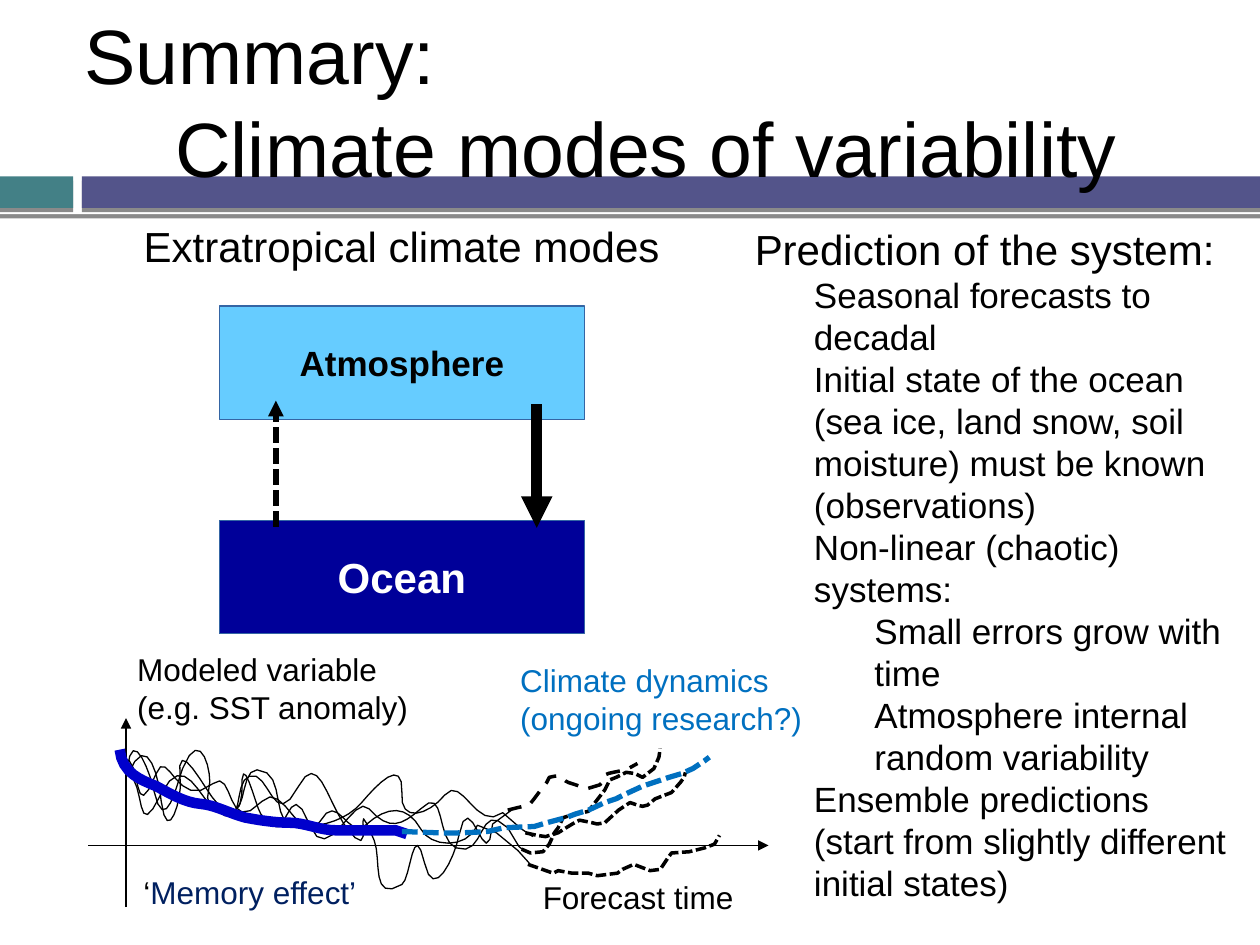
from dataclasses import dataclass

from lxml.etree import SubElement
from pptx import Presentation
from pptx.dml.color import RGBColor
from pptx.enum.dml import MSO_LINE
from pptx.enum.shapes import MSO_CONNECTOR, MSO_SHAPE
from pptx.enum.text import MSO_ANCHOR, PP_ALIGN
from pptx.oxml.ns import qn
from pptx.util import Cm, Pt


@dataclass(frozen=True)
class Theme:
    font: str = "Arial"
    black: str = "000000"
    white: str = "FFFFFF"
    teal: str = "438086"
    violet: str = "53548A"
    sky: str = "66CCFF"
    navy: str = "000099"
    outline: str = "3465A4"
    memory: str = "0000CC"
    memory_text: str = "002060"
    dynamics: str = "0070C0"
    title: int = 44
    heading: int = 24
    body: int = 20
    label: int = 18


def inch(value):
    return Cm(value * 2.54)


def bezier(start, segment, steps=8):
    points = [start, segment[:2], segment[2:4], segment[4:]]
    for step in range(1, steps + 1):
        t = step / steps
        weights = ((1 - t) ** 3, 3 * t * (1 - t) ** 2, 3 * t * t * (1 - t), t ** 3)
        yield tuple(sum(w * point[axis] for w, point in zip(weights, points)) for axis in (0, 1))


class SlideBuilder:
    def __init__(self, page, theme):
        self.page = page
        self.theme = theme

    def span(self, para, text, size, color, bold=False):
        span = para.add_run()
        span.text = text
        span.font.name = self.theme.font
        span.font.size = Pt(size)
        span.font.bold = bold
        span.font.color.rgb = RGBColor.from_string(color)

    def block(self, left, top, width, height, fill, outline=None, shadow=False):
        box = self.page.shapes.add_shape(
            MSO_SHAPE.RECTANGLE, inch(left), inch(top), inch(width), inch(height))
        box.fill.solid()
        box.fill.fore_color.rgb = RGBColor.from_string(fill)
        if outline:
            self.stroke(box.line, outline, 0.75)
        else:
            box.line.fill.background()
        box.shadow.inherit = False
        if shadow:
            effects = box._element.spPr.find(qn("a:effectLst"))
            outer = SubElement(effects, qn("a:outerShdw"), blurRad="0", dist=str(Pt(2.4)),
                               dir="5400000", algn="ctr", rotWithShape="0")
            color = SubElement(outer, qn("a:srgbClr"), val=self.theme.black)
            SubElement(color, qn("a:alpha"), val="45000")
        return box

    def component(self, left, top, text, size, fill, color):
        box = self.block(left, top, 2.9, 0.9, fill, self.theme.outline)
        frame = box.text_frame
        frame.vertical_anchor = MSO_ANCHOR.MIDDLE
        para = frame.paragraphs[0]
        para.alignment = PP_ALIGN.CENTER
        self.span(para, text, size, color, True)

    def text_box(self, left, top, width, height, wrap, margin=True):
        box = self.page.shapes.add_textbox(inch(left), inch(top), inch(width), inch(height))
        frame = box.text_frame
        frame.word_wrap = wrap
        if not margin:
            frame.margin_left = frame.margin_right = frame.margin_top = frame.margin_bottom = 0
        return frame

    def title(self, left, top, width, height, lines):
        frame = self.text_box(left, top, width, height, True, False)
        frame.vertical_anchor = MSO_ANCHOR.MIDDLE
        for index, (text, alignment) in enumerate(lines):
            para = frame.add_paragraph() if index else frame.paragraphs[0]
            para.alignment = alignment
            self.span(para, text, self.theme.title, self.theme.black)

    def outline(self, left, top, width, height, lines):
        frame = self.text_box(left, top, width, height, True, False)
        for index, (level, text) in enumerate(lines):
            para = frame.add_paragraph() if index else frame.paragraphs[0]
            para.level = level
            properties = para._p.get_or_add_pPr()
            properties.set("marL", str(inch((0.47, 0.94, 1.42)[level])))
            properties.set("indent", "0")
            size = self.theme.body if level else self.theme.heading
            self.span(para, text, size, self.theme.black)

    def label(self, left, top, width, height, lines):
        frame = self.text_box(left, top, width, height, False)
        for index, spans in enumerate(lines):
            para = frame.add_paragraph() if index else frame.paragraphs[0]
            for text, color in spans:
                self.span(para, text, self.theme.label, color)

    def stroke(self, line, color, weight, dash=None):
        line.color.rgb = RGBColor.from_string(color)
        line.width = Pt(weight)
        if dash:
            line.dash_style = dash

    def arrow(self, start, end, weight, dash=None):
        arrow = self.page.shapes.add_connector(
            MSO_CONNECTOR.STRAIGHT, *(inch(value) for value in start + end))
        self.stroke(arrow.line, self.theme.black, weight, dash)
        properties = arrow._element.spPr
        SubElement(properties.find(qn("a:ln")), qn("a:tailEnd"), type="triangle")
        SubElement(properties, qn("a:effectLst"))

    def curve(self, start, segments, color, weight, dash=None):
        points = [start]
        for segment in segments:
            points.extend(bezier(points[-1], segment) if len(segment) == 6 else [segment])
        points = [(inch(x), inch(y)) for x, y in points]
        builder = self.page.shapes.build_freeform(*points[0])
        builder.add_line_segments(points[1:], close=False)
        curve = builder.convert_to_shape()
        curve.fill.background()
        curve.shadow.inherit = False
        self.stroke(curve.line, color, weight, dash)


MEMBERS = [
    ((0.98, 6.02), [(1.13, 6, 1.05, 6.6, 1.24, 6.14), (1.33, 5.91, 1.41, 6.45, 1.69, 6.22), (1.86, 6.08, 1.79, 6.66, 2.08, 6.36), (2.25, 6.18, 2.4, 6.77, 2.54, 6.52), (2.68, 6.27, 2.76, 6.67, 2.9, 6.55), (3.08, 6.39, 3.23, 6.39, 3.34, 6.58), (3.41, 6.72, 3.7, 6.75, 3.79, 6.55), (3.94, 6.61), (4.11, 6.75), (4.2, 6.85)]),
    ((1.01, 6.11), [(1.05, 5.72, 1.21, 6.19, 1.22, 6.27), (1.31, 6.67, 1.41, 6.2, 1.45, 6.1), (1.6, 5.73, 1.69, 6.17, 1.66, 6.25), (1.58, 6.49, 1.92, 6.55, 1.92, 6.3), (1.91, 5.89, 2.03, 6.4, 2.07, 6.46), (2.3, 6.83, 2.27, 6.07, 2.46, 6.55), (2.6, 6.9, 2.81, 6.28, 2.93, 6.42), (3.09, 6.6, 3.19, 6.55, 3.34, 6.42), (3.54, 6.22, 3.46, 6.67, 3.62, 6.73), (3.86, 6.82, 3.79, 6.34, 4.03, 6.57), (4.12, 6.72), (4.17, 6.76)]),
    ((1.01, 6.13), [(1.16, 6.2, 1.07, 6.73, 1.28, 6.3), (1.46, 5.94, 1.59, 6.35, 1.71, 6.43), (1.96, 6.62, 1.84, 6.21, 1.98, 6.16), (2.14, 6.1, 2.17, 6.62, 2.37, 6.24), (2.52, 5.96, 2.59, 6.33, 2.73, 6.54), (3.03, 6.97, 2.76, 6.17, 2.97, 6.67), (3.03, 6.82, 2.94, 7.17, 3.19, 7.02), (3.26, 6.98, 3.28, 6.47, 3.37, 6.85), (3.44, 7.17, 3.61, 6.8, 3.64, 6.64), (3.73, 6.17, 3.86, 7.02, 3.91, 6.54), (4.06, 6.43)]),
    ((1.01, 6.16), [(1.18, 5.74, 1.27, 6.24, 1.28, 6.36), (1.33, 6.74, 1.45, 6.32, 1.43, 6.19), (1.39, 5.78, 1.64, 6.3, 1.72, 6.37), (1.99, 6.62, 1.88, 6.11, 2.04, 6.11), (2.3, 6.12, 2.11, 6.6, 2.4, 6.57), (2.57, 6.55, 2.75, 6.51, 2.87, 6.37), (2.99, 6.23, 3.2, 6, 3.19, 6.29), (3.17, 6.54, 3.4, 6.47, 3.53, 6.31), (3.67, 6.14, 3.78, 6.61, 3.99, 6.45), (4.14, 6.58), (4.23, 6.64)]),
]
MEMORY = ((0.95, 5.95), [(0.97, 6.14, 1.12, 6.19, 1.24, 6.24), (1.35, 6.3, 1.47, 6.37, 1.59, 6.38), (1.71, 6.39, 1.83, 6.46, 1.95, 6.49), (2.06, 6.51, 2.18, 6.53, 2.3, 6.53), (2.42, 6.53, 2.54, 6.59, 2.66, 6.59), (3.14, 6.59), (3.23, 6.62)])
FORECASTS = [
    (MSO_LINE.DASH, (4.03, 6.43), [(4.11, 6.41), (4.2, 6.39), (4.24, 6.34), (4.3, 6.26), (4.34, 6.21), (4.36, 6.17), (4.48, 6.14, 4.44, 6.18, 4.51, 6.21), (4.57, 6.23), (4.66, 6.26), (4.76, 6.23), (4.82, 6.18, 4.75, 6.15, 4.87, 6.13), (4.97, 6.11), (5.06, 6.06)]),
    (MSO_LINE.SQUARE_DOT, (4.17, 6.61), [(4.26, 6.63), (4.33, 6.64), (4.43, 6.61), (4.51, 6.56), (4.56, 6.53), (4.6, 6.51), (4.7, 6.53), (4.74, 6.54), (4.8, 6.53), (4.91, 6.43), (5, 6.37), (5.06, 6.39), (5.1, 6.4), (5.14, 6.39), (5.2, 6.34), (5.33, 6.29), (5.4, 6.21), (5.43, 6.17), (5.44, 6.13)]),
    (MSO_LINE.SQUARE_DOT, (4.14, 6.74), [(4.21, 6.77), (4.31, 6.76), (4.36, 6.7), (4.4, 6.61), (4.43, 6.57), (4.47, 6.49), (4.53, 6.47), (4.67, 6.44), (4.7, 6.4), (4.8, 6.27), (4.84, 6.19), (4.89, 6.17), (4.97, 6.13), (5.04, 6.14), (5.1, 6.17), (5.19, 6.1), (5.23, 6.01), (5.24, 5.94)]),
    (MSO_LINE.SQUARE_DOT, (4.19, 6.86), [(4.39, 6.93), (4.43, 6.91), (4.54, 6.93), (4.67, 6.93), (4.74, 6.95), (4.9, 6.93), (4.94, 6.9), (5.03, 6.86), (5.16, 6.91), (5.24, 6.9), (5.3, 6.81), (5.33, 6.77), (5.47, 6.76), (5.59, 6.73), (5.67, 6.7), (5.71, 6.63)]),
]
DYNAMICS = ((3.19, 6.6), [(3.51, 6.61, 3.56, 6.62, 3.87, 6.6), (4, 6.57), (4.24, 6.56), (4.34, 6.53), (4.49, 6.49), (4.57, 6.46), (4.67, 6.43), (4.8, 6.37), (4.89, 6.34), (4.97, 6.3), (5.1, 6.24), (5.31, 6.17), (5.41, 6.14), (5.5, 6.1), (5.59, 6.04), (5.63, 6.01)])
PREDICTION = [
    (0, "Prediction of the system:"),
    (1, "Seasonal forecasts to decadal"),
    (1, "Initial state of the ocean (sea ice, land snow, soil moisture) must be known (observations)"),
    (1, "Non-linear (chaotic) systems:"),
    (2, "Small errors grow with time"),
    (2, "Atmosphere internal random variability"),
    (1, "Ensemble predictions"),
    (1, "(start from slightly different initial states)"),
]


def main():
    deck = Presentation()
    deck.slide_width, deck.slide_height = Cm(25.4), Cm(19.05)
    theme = Theme()
    slide = SlideBuilder(deck.slides.add_slide(deck.slide_layouts[6]), theme)

    slide.block(0, 1.35, 10, 0.35, theme.white, shadow=True)
    slide.block(0, 1.4, 0.58, 0.25, theme.teal, shadow=True)
    slide.block(0.65, 1.4, 9.35, 0.25, theme.violet, shadow=True)
    slide.title(0.67, 0.11, 8.92, 1.37, [
        ("Summary:", PP_ALIGN.LEFT), ("Climate modes of variability", PP_ALIGN.CENTER)])
    slide.outline(0.67, 1.75, 5.25, 4.92, [(0, "Extratropical climate modes")])
    slide.outline(5.52, 1.77, 4.35, 4.92, PREDICTION)

    slide.arrow((0.7, 6.71), (6.1, 6.71), 0.75)
    slide.arrow((1, 7.2), (1, 5.7), 0.75)
    slide.label(4.21, 6.92, 1.9, 0.38, [[("Forecast time", theme.black)]])
    slide.label(0.99, 5.11, 2.81, 0.66, [
        [("Modeled variable", theme.black)], [("(e.g. SST anomaly)", theme.black)]])
    for start, segments in MEMBERS:
        slide.curve(start, segments, theme.black, 0.75)
    slide.curve(*MEMORY, theme.memory, 6)

    slide.component(1.74, 4.13, "Ocean", theme.heading, theme.navy, theme.white)
    slide.component(1.74, 2.43, "Atmosphere", theme.body, theme.sky, theme.black)
    slide.arrow((4.26, 3.21), (4.26, 4.19), 6)
    slide.arrow((2.19, 4.18), (2.19, 3.18), 3, MSO_LINE.SQUARE_DOT)

    for dash, start, segments in FORECASTS:
        slide.curve(start, segments, theme.black, 2, dash)
    slide.curve(*DYNAMICS, theme.dynamics, 3, MSO_LINE.SQUARE_DOT)
    slide.label(1.04, 6.88, 1.9, 0.4, [
        [("‘", theme.black), ("Memory effect’", theme.memory_text)]])
    slide.label(4.03, 5.2, 2.46, 0.71, [
        [("Climate dynamics", theme.dynamics)], [("(ongoing research?)", theme.dynamics)]])
    deck.save("out.pptx")


if __name__ == "__main__":
    main()
